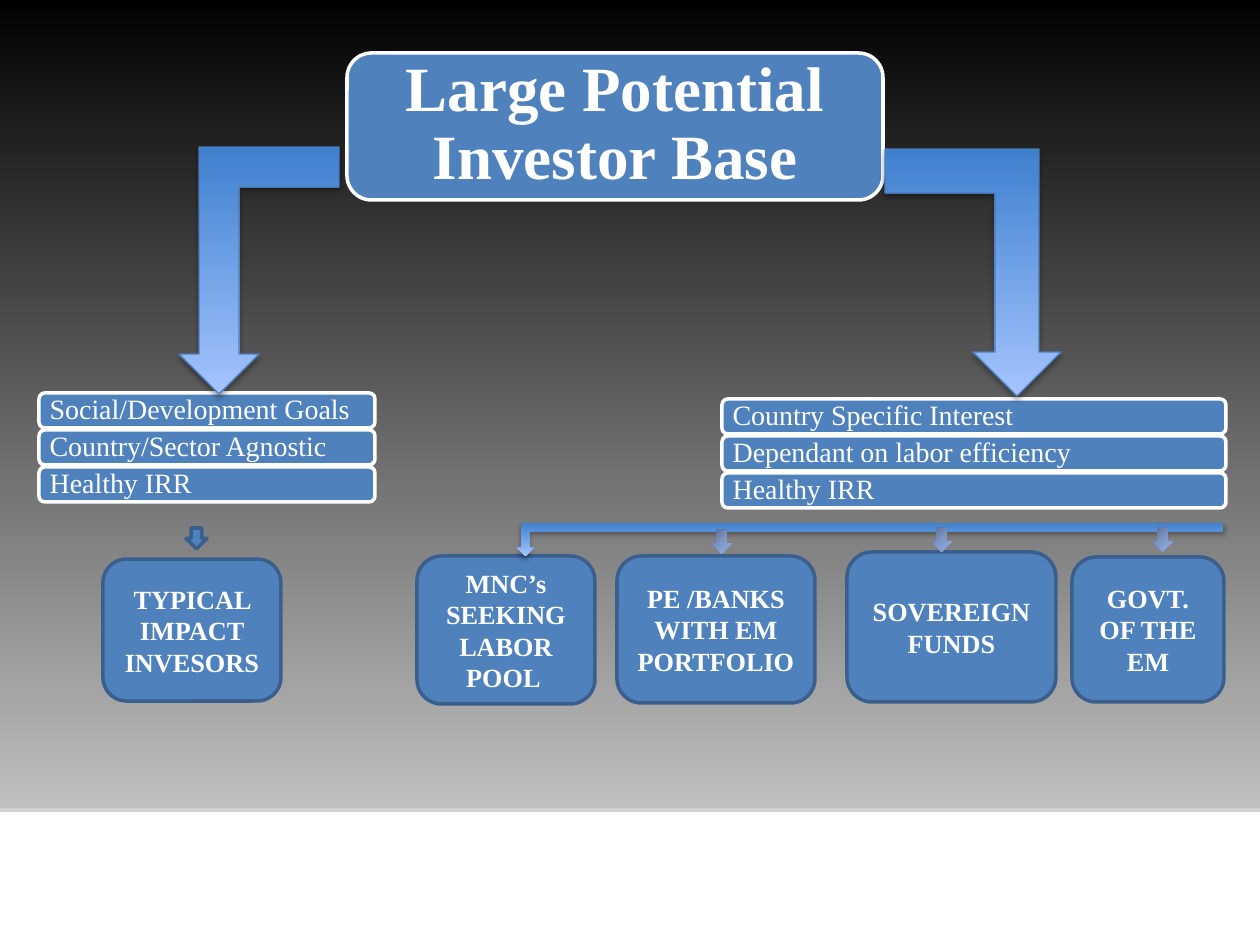
from lxml import etree
from pptx import Presentation
from pptx.dml.color import RGBColor
from pptx.enum.shapes import MSO_SHAPE as Shape
from pptx.enum.text import MSO_ANCHOR as Anchor, MSO_AUTO_SIZE as AutoSize, PP_ALIGN as Align
from pptx.oxml import parse_xml
from pptx.util import Emu, Pt

EMU_PER_PX = 914400 / 126
DRAWING_NS = "http://schemas.openxmlformats.org/drawingml/2006/main"
FONT = "Times New Roman"

COLORS = {
    "white": "FFFFFF", "blue": "4F81BD", "card_edge": "3A5F8C", "arrow_edge": "4B7EBC",
    "black": "000000", "gray": "808080",
}
GRADIENTS = {  # stops in percent, then the angle in degrees
    "backdrop": ([(0, "000000"), (100, "BFBFBF")], 90),
    "bent": ([(0, "3F80CE"), (100, "A4C4FF")], 270),
    "small": ([(0, "586A8B"), (50, "7E97C5"), (100, "95B4EA")], 45),
}

TITLE = "Large Potential Investor Base"
TITLE_BOX = (347, 53, 536, 147)
TITLE_TEXT = (354, 59, 522, 132)

# left, top, width, criteria
CRITERIA = [
    (39, 393, 336, ["Social/Development Goals", "Country/Sector Agnostic", "Healthy IRR"]),
    (722, 399, 504, ["Country Specific Interest", "Dependant on labor efficiency", "Healthy IRR"]),
]
BAR_HEIGHT, BAR_PITCH = 35, 37

INVESTORS = [
    ((103, 559, 178, 142), ["TYPICAL IMPACT INVESORS"]),
    ((417, 556, 178, 148), ["MNC’s SEEKING LABOR POOL "]),
    ((617, 556, 198, 147), ["PE /BANKS WITH EM", "PORTFOLIO"]),
    ((847, 552, 209, 150), ["SOVEREIGN FUNDS"]),
    ((1072, 557, 152, 145), ["GOVT. OF THE EM"]),
]

# box, points right, has an outline
BENT_ARROWS = [
    ((179, 147, 160, 247), False, True),
    ((885, 149, 176, 247), True, True),
    ((517, 523, 706, 33), False, False),
]
SMALL_ARROWS = [(711, 530), (931, 528), (1152, 528)]
SMALL_SIZE = (21, 24)
IMPACT_ARROW = (186, 528, 21, 21)


def px(value):
    return Emu(round(value * EMU_PER_PX))


def add_gradient(shape, name):
    stops, angle = GRADIENTS[name]
    stop_xml = "".join(
        f'<a:gs pos="{position * 1000}"><a:srgbClr val="{color}"/></a:gs>'
        for position, color in stops)
    gradient = parse_xml(
        f'<a:gradFill xmlns:a="{DRAWING_NS}" rotWithShape="1"><a:gsLst>{stop_xml}</a:gsLst>'
        f'<a:lin ang="{angle * 60000}" scaled="0"/></a:gradFill>')
    shape._element.spPr.find(f"{{{DRAWING_NS}}}prstGeom").addnext(gradient)


def add_shadow(shape, color, blur):
    effects = shape._element.spPr.find(f"{{{DRAWING_NS}}}effectLst")
    shadow = etree.SubElement(
        effects, f"{{{DRAWING_NS}}}outerShdw", blurRad=str(Pt(blur)), dist=str(Pt(1.8)),
        dir="5400000", rotWithShape="0")
    tone = etree.SubElement(shadow, f"{{{DRAWING_NS}}}srgbClr", val=COLORS[color])
    etree.SubElement(tone, f"{{{DRAWING_NS}}}alpha", val="35000")


def add_shape(slide, kind, box, fill=None, gradient=None, line=None, line_width=2):
    shape = slide.shapes.add_shape(kind, *map(px, box))
    shape.shadow.inherit = False
    if gradient:
        add_gradient(shape, gradient)
    else:
        shape.fill.solid()
        shape.fill.fore_color.rgb = RGBColor.from_string(COLORS[fill])
    if line:
        shape.line.color.rgb = RGBColor.from_string(COLORS[line])
        shape.line.width = Pt(line_width)
    else:
        shape.line.fill.background()
    return shape


def write_text(shape, paragraphs, size, bold=False, align=Align.CENTER, spacing=None,
               inset=(13, 6)):
    frame = shape.text_frame
    frame.word_wrap = True
    frame.auto_size = AutoSize.NONE
    frame.vertical_anchor = Anchor.MIDDLE
    frame.margin_left = frame.margin_right = px(inset[0])
    frame.margin_top = frame.margin_bottom = px(inset[1])
    frame.text = "\n".join(paragraphs)
    for paragraph in frame.paragraphs:
        paragraph.alignment = align
        paragraph.line_spacing = spacing
        font = paragraph.runs[0].font
        font.name, font.size, font.bold = FONT, Pt(size), bold
        font.color.rgb = RGBColor.from_string(COLORS["white"])


def add_title(slide):
    add_shape(slide, Shape.ROUNDED_RECTANGLE, TITLE_BOX, fill="blue", line="white")
    title = slide.shapes.title
    title.left, title.top, title.width, title.height = map(px, TITLE_TEXT)
    write_text(title, [TITLE], 36, bold=True, spacing=0.9, inset=(19, 0))
    slide.shapes._spTree.append(title._element)  # bring in front of its box


def main():
    presentation = Presentation()
    presentation.slide_width, presentation.slide_height = px(1260), px(945)
    slide = presentation.slides.add_slide(presentation.slide_layouts[5])

    backdrop = add_shape(slide, Shape.RECTANGLE, (0, -5, 1260, 813), gradient="backdrop")
    add_shadow(backdrop, "gray", 0)
    add_title(slide)

    for box, paragraphs in INVESTORS:
        card = add_shape(slide, Shape.ROUNDED_RECTANGLE, box, fill="blue", line="card_edge")
        write_text(card, paragraphs, 15, bold=True)

    for left, top, width, criteria in CRITERIA:
        for row, text in enumerate(criteria):
            box = (left, top + row * BAR_PITCH, width, BAR_HEIGHT)
            bar = add_shape(slide, Shape.ROUNDED_RECTANGLE, box, fill="blue", line="white")
            write_text(bar, [text], 16, align=Align.LEFT, spacing=0.9, inset=(9, 0))

    for box, points_right, outlined in BENT_ARROWS:
        arrow = add_shape(slide, Shape.BENT_UP_ARROW, box, gradient="bent",
                          line="arrow_edge" if outlined else None, line_width=0.75)
        arrow.rotation = 180
        if points_right:
            arrow._element.spPr.xfrm.set("flipH", "1")
        add_shadow(arrow, "black", 3.1)

    for position in SMALL_ARROWS:
        add_shape(slide, Shape.DOWN_ARROW, position + SMALL_SIZE, gradient="small")
    add_shape(slide, Shape.DOWN_ARROW, IMPACT_ARROW, fill="blue", line="card_edge")

    presentation.save("out.pptx")


if __name__ == "__main__":
    main()
